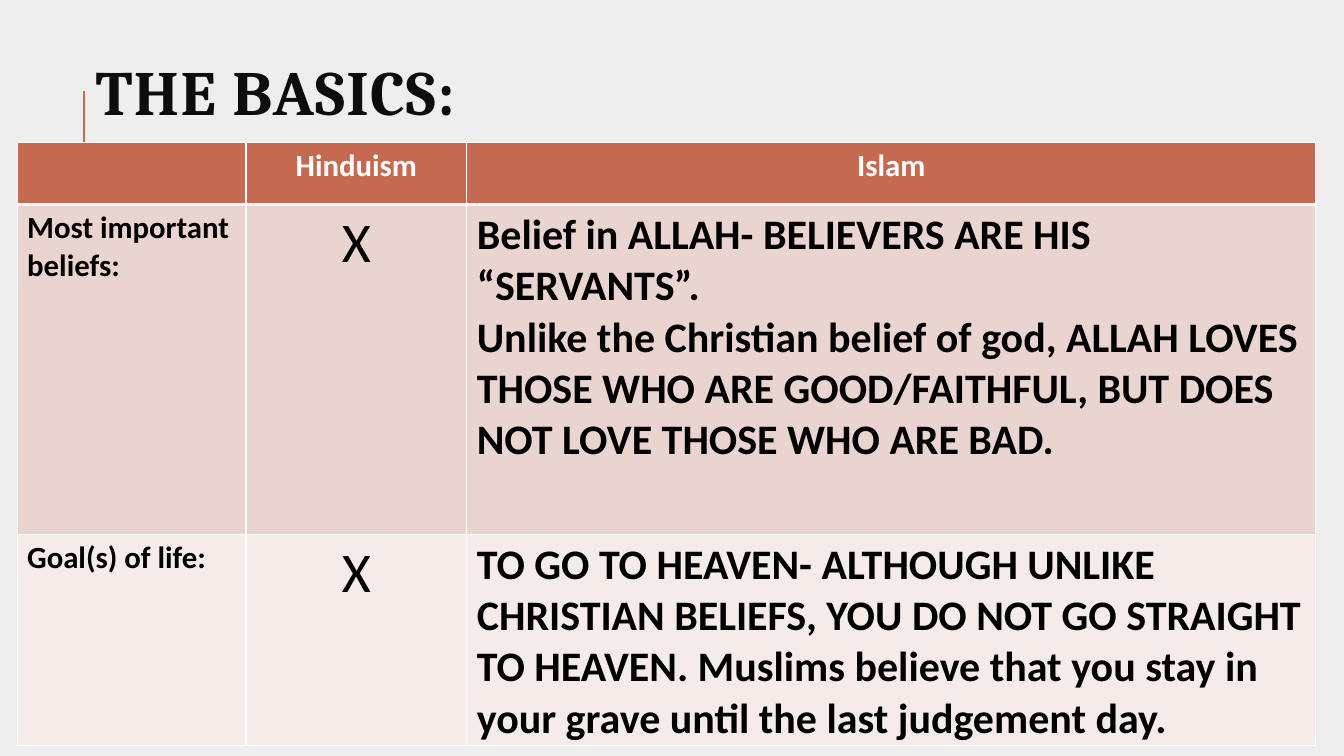
from lxml.etree import SubElement
from pptx import Presentation
from pptx.dml.color import RGBColor
from pptx.enum.shapes import MSO_CONNECTOR
from pptx.enum.text import MSO_ANCHOR, PP_ALIGN
from pptx.oxml.ns import qn
from pptx.util import Inches, Pt

BACKGROUND = RGBColor(0xEE, 0xEE, 0xEE)
RUST = RGBColor(0xC6, 0x69, 0x51)
ROSE = RGBColor(0xEA, 0xD4, 0xD0)
PALE_ROSE = RGBColor(0xF5, 0xEB, 0xE9)
WHITE = RGBColor(0xFF, 0xFF, 0xFF)
BLACK = RGBColor(0, 0, 0)
TITLE_COLOR = RGBColor(0x0D, 0x0D, 0x0D)

TITLE = "THE BASICS:"
ROWS = [
    ["", "Hinduism", "Islam"],
    ["Most important beliefs:", "X",
     "Belief in ALLAH- BELIEVERS ARE HIS “SERVANTS”.\n"
     "Unlike the Christian belief of god, ALLAH LOVES THOSE WHO ARE "
     "GOOD/FAITHFUL, BUT DOES NOT LOVE THOSE WHO ARE BAD."],
    ["Goal(s) of life:", "X",
     "TO GO TO HEAVEN- ALTHOUGH UNLIKE CHRISTIAN BELIEFS, YOU DO NOT GO "
     "STRAIGHT TO HEAVEN. Muslims believe that you stay in your grave until "
     "the last judgement day."],
]
COLUMN_WIDTHS = [2.27, 2.19, 8.42]
ROW_HEIGHTS = [0.62, 3.27, 2.1]
ROW_FILLS = [RUST, ROSE, PALE_ROSE]
# Size, bold and alignment of each column below the header
HEADER_STYLE = (22, True, PP_ALIGN.CENTER)
BODY_STYLES = [(22, True, PP_ALIGN.LEFT), (40, False, PP_ALIGN.CENTER),
               (30, True, PP_ALIGN.LEFT)]


def format_font(font, name, size, bold, color):
    font.name = name
    font.size = Pt(size)
    font.bold = bold
    font.color.rgb = color


def add_borders(cell, widths):
    """Draw white borders; widths maps a side letter to points."""
    properties = cell._tc.get_or_add_tcPr()
    for side, width in widths.items():
        line = SubElement(properties, qn(f"a:ln{side}"), w=str(Pt(width)))
        fill = SubElement(line, qn("a:solidFill"))
        SubElement(fill, qn("a:srgbClr"), val=str(WHITE))


def add_accent_line(page):
    line = page.shapes.add_connector(
        MSO_CONNECTOR.STRAIGHT, Inches(0.83), Inches(1.9), Inches(0.83), Inches(0.9))
    line.line.color.rgb = RUST
    line.line.width = Pt(1.5)
    SubElement(line._element.spPr, qn("a:effectLst"))


def add_title(page):
    box = page.shapes.add_textbox(Inches(0.85), Inches(0.53), Inches(10.63), Inches(0.88))
    frame = box.text_frame
    frame.word_wrap = True
    frame.vertical_anchor = MSO_ANCHOR.MIDDLE
    frame.text = TITLE
    para = frame.paragraphs[0]
    para.line_spacing = 0.8
    span = para.runs[0]
    format_font(span.font, "Cambria", 45, True, TITLE_COLOR)
    span.font._element.set("spc", "100")


def add_comparison_table(page):
    table = page.shapes.add_table(
        len(ROWS), len(COLUMN_WIDTHS), Inches(0.17), Inches(1.41),
        Inches(sum(COLUMN_WIDTHS)), Inches(sum(ROW_HEIGHTS))).table
    table.horz_banding = False
    for column, width in zip(table.columns, COLUMN_WIDTHS):
        column.width = Inches(width)
    for row_index, texts in enumerate(ROWS):
        header = row_index == 0
        table.rows[row_index].height = Inches(ROW_HEIGHTS[row_index])
        for column_index, text in enumerate(texts):
            cell = table.cell(row_index, column_index)
            add_borders(cell, {"L": 1, "R": 1, "T": 3 if row_index == 1 else 1,
                               "B": 3 if header else 1})
            cell.fill.solid()
            cell.fill.fore_color.rgb = ROW_FILLS[row_index]
            cell.text_frame.text = text
            size, bold, alignment = HEADER_STYLE if header else BODY_STYLES[column_index]
            for para in cell.text_frame.paragraphs:
                para.alignment = alignment
                for span in para.runs:
                    format_font(span.font, "Calibri", size, bold, WHITE if header else BLACK)


def main():
    deck = Presentation()
    deck.slide_width, deck.slide_height = Inches(13.33), Inches(7.5)
    page = deck.slides.add_slide(deck.slide_layouts[6])
    page.background.fill.solid()
    page.background.fill.fore_color.rgb = BACKGROUND
    add_accent_line(page)
    add_title(page)
    add_comparison_table(page)
    deck.save("out.pptx")


if __name__ == "__main__":
    main()
